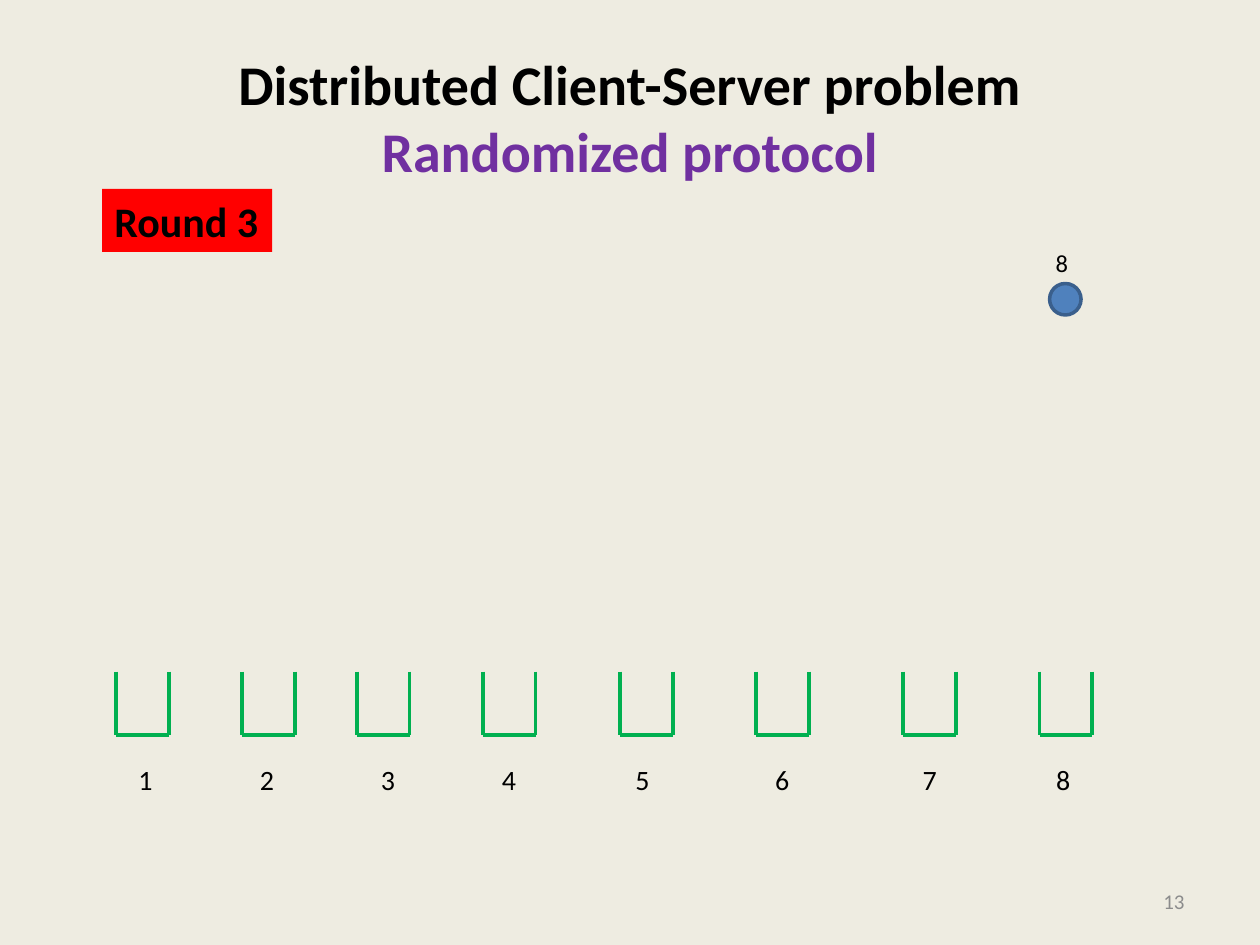
import pptx
import pptx.dml.color
import pptx.enum.shapes
import pptx.enum.text
import pptx.oxml.ns
import pptx.util
from lxml import etree

Inches, Pt = pptx.util.Inches, pptx.util.Pt
ALIGN = pptx.enum.text.PP_ALIGN
ANCHOR = pptx.enum.text.MSO_ANCHOR
SHAPE = pptx.enum.shapes.MSO_SHAPE
LINE = pptx.enum.shapes.MSO_CONNECTOR.STRAIGHT
qn = pptx.oxml.ns.qn

COLORS = {"back": "EEECE1", "text": "000000", "title": "7030A0",
          "page": "8C8C8C", "ball": "4F81BD", "edge": "3A5F8C",
          "bin": "00B050", "round": "FF0000"}


def color(name):
    return pptx.dml.color.RGBColor.from_string(COLORS[name])


def write(shape, text, size, ink="text", bold=False, align=ALIGN.LEFT,
          anchor=ANCHOR.TOP, wrap=True):
    frame = shape.text_frame
    frame.word_wrap = wrap
    frame.vertical_anchor = anchor
    para = frame.paragraphs[0]
    para.text = text
    para.alignment = align
    para.font.name = "Calibri"
    para.font.size = Pt(size)
    para.font.bold = bold
    para.font.color.rgb = color(ink)
    return para


deck = pptx.Presentation()
deck.slide_width, deck.slide_height = Inches(10), Inches(7.5)
slide = deck.slides.add_slide(deck.slide_layouts[6])
slide.background.fill.solid()
slide.background.fill.fore_color.rgb = color("back")
shapes = slide.shapes

# Title and page number
box = shapes.add_textbox(Inches(0.5), Inches(0.3), Inches(9), Inches(1.25))
para = write(box, "Distributed Client-Server problem\vRandomized protocol", 32,
             bold=True, align=ALIGN.CENTER, anchor=ANCHOR.MIDDLE)
para.runs[1].font.color.rgb = color("title")

box = shapes.add_textbox(Inches(7.17), Inches(6.95), Inches(2.33), Inches(0.4))
write(box, "13", 12, "page", align=ALIGN.RIGHT, anchor=ANCHOR.MIDDLE)

# Remaining client
client = shapes.add_group_shape().shapes
ball = client.add_shape(SHAPE.OVAL, Inches(8.33), Inches(2.25),
                        Inches(0.25), Inches(0.25))
ball.shadow.inherit = False
ball.fill.solid()
ball.fill.fore_color.rgb = color("ball")
ball.line.color.rgb = color("edge")
ball.line.width = Pt(2)
box = client.add_textbox(Inches(8.28), Inches(1.92), Inches(0.3), Inches(0.34))
write(box, "8", 14, wrap=False)

# Servers: open bins
servers = shapes.add_group_shape().shapes
top, base, width = 5.33, 5.83, 0.42
for left in (0.92, 1.92, 2.83, 3.83, 4.92, 6, 7.17, 8.25):
    right = left + width
    for x1, y1, x2, y2 in ((left, top, left, base), (right, top, right, base),
                           (left, base, right, base)):
        side = servers.add_connector(LINE, Inches(x1), Inches(y1),
                                     Inches(x2), Inches(y2))
        side.line.color.rgb = color("bin")
        side.line.width = Pt(2.25)
        etree.SubElement(side._element.spPr, qn("a:effectLst"))

# Server numbers on centred tab stops
box = servers.add_textbox(Inches(1), Inches(6), Inches(7.67), Inches(0.37))
para = write(box, "\t".join(str(n) for n in range(1, 9)), 16)
tabs = etree.Element(qn("a:tabLst"))
for stop in (1.02, 1.98, 2.94, 4, 5.11, 6.28, 7.34):
    etree.SubElement(tabs, qn("a:tab"), pos=str(Inches(stop)), algn="ctr")
para._p.get_or_add_pPr().insert(0, tabs)

# Round label
label = shapes.add_shape(SHAPE.RECTANGLE, Inches(0.81), Inches(1.5),
                         Inches(1.35), Inches(0.5))
label.shadow.inherit = False
label.fill.solid()
label.fill.fore_color.rgb = color("round")
label.line.fill.background()
write(label, "Round 3", 24, bold=True, wrap=False)

deck.save("out.pptx")
